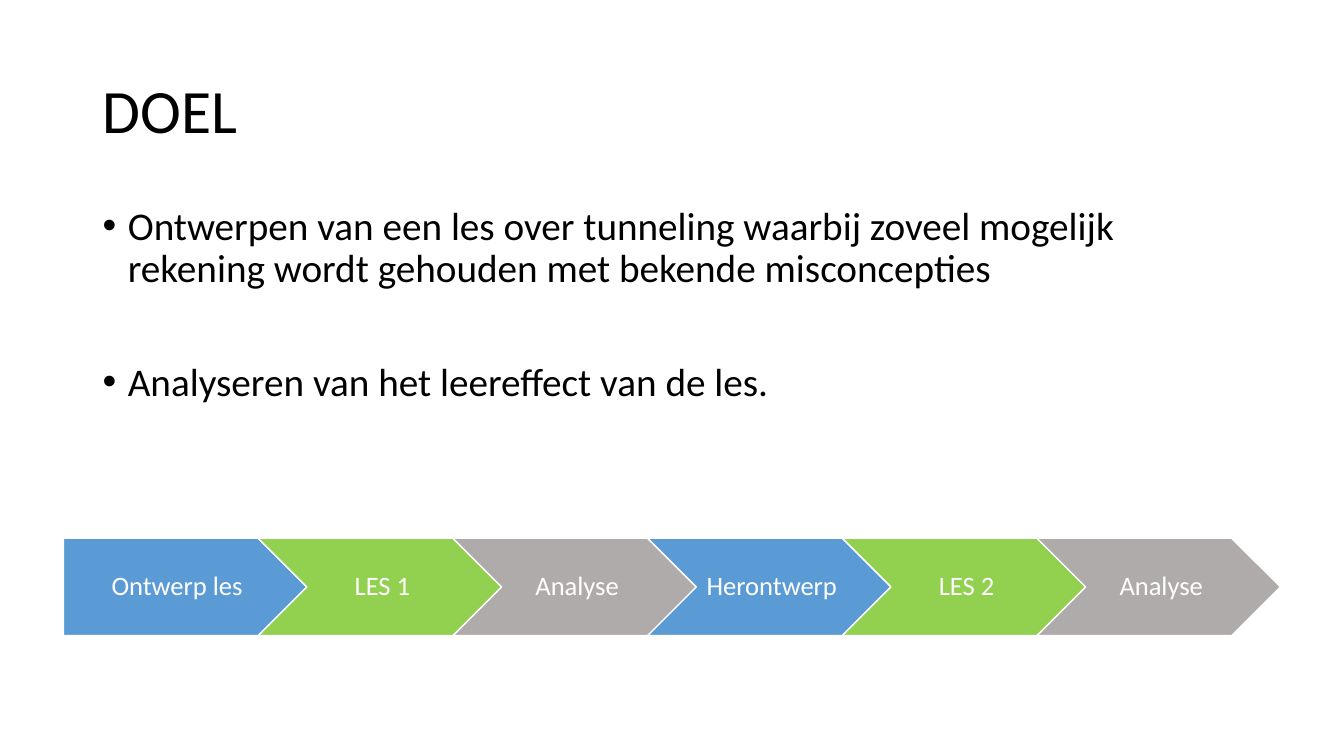
from lxml.etree import SubElement
from pptx import Presentation
from pptx.dml.color import RGBColor
from pptx.enum.shapes import MSO_SHAPE as Shape
from pptx.enum.text import MSO_ANCHOR as Anchor, PP_ALIGN as Align
from pptx.oxml.ns import qn
from pptx.util import Inches, Pt

TITLE = "DOEL"
GOALS = [  # text, space before in points
    ("Ontwerpen van een les over tunneling waarbij zoveel mogelijk "
     "rekening wordt gehouden met bekende misconcepties", 10),
    ("Analyseren van het leereffect van de les.", 51),
]
STEPS = ["Ontwerp les", "LES 1", "Analyse", "Herontwerp", "LES 2", "Analyse"]
STEP_COLORS = ["5B9BD5", "92D050", "AFABAB"]
BLACK, WHITE = "000000", "FFFFFF"
FONT = "Calibri"

SLIDE_WIDTH, SLIDE_HEIGHT = 13.33, 7.5
MARGIN, CONTENT_WIDTH = 0.92, 11.5
BAND_LEFT, BAND_TOP, BAND_WIDTH = 0.63, 5.34, 12.07
OVERLAP = 0.2  # share of a step covered by the next one
STEP_WIDTH = BAND_WIDTH / (len(STEPS) - (len(STEPS) - 1) * OVERLAP)
STEP_HEIGHT = STEP_WIDTH * 2 * OVERLAP
STEP_PITCH = STEP_WIDTH * (1 - OVERLAP)


def color(hex_value):
    return RGBColor.from_string(hex_value)


def format_paragraph(paragraph, size, font_color):
    paragraph.line_spacing = 0.9
    for run in paragraph.runs:
        run.font.name = FONT
        run.font.size = Pt(size)
        run.font.color.rgb = color(font_color)


def add_bullet(paragraph):
    properties = paragraph._p.get_or_add_pPr()
    properties.set("marL", str(Inches(0.25)))
    properties.set("indent", str(-Inches(0.25)))
    SubElement(properties, qn("a:buFont")).set("typeface", "Arial")
    SubElement(properties, qn("a:buChar")).set("char", "•")


def add_text_frame(slide, top, height):
    box = slide.shapes.add_textbox(Inches(MARGIN), Inches(top),
                                   Inches(CONTENT_WIDTH), Inches(height))
    box.text_frame.word_wrap = True
    return box.text_frame


def add_title(slide):
    frame = add_text_frame(slide, 0.4, 1.45)
    frame.vertical_anchor = Anchor.MIDDLE
    frame.text = TITLE
    format_paragraph(frame.paragraphs[0], 44, BLACK)


def add_goals(slide):
    frame = add_text_frame(slide, 2, 2.77)
    frame.text = "\n".join(text for text, _ in GOALS)
    for paragraph, (_, space_before) in zip(frame.paragraphs, GOALS):
        format_paragraph(paragraph, 28, BLACK)
        paragraph.space_before = Pt(space_before)
        add_bullet(paragraph)


def add_step(slide, index, label):
    first = index == 0
    step = slide.shapes.add_shape(
        Shape.PENTAGON if first else Shape.CHEVRON,
        Inches(BAND_LEFT + index * STEP_PITCH), Inches(BAND_TOP),
        Inches(STEP_WIDTH), Inches(STEP_HEIGHT))
    step.shadow.inherit = False
    step.fill.solid()
    step.fill.fore_color.rgb = color(STEP_COLORS[index % len(STEP_COLORS)])
    step.line.color.rgb = color(WHITE)
    step.line.width = Pt(1)

    frame = step.text_frame
    frame.word_wrap = True
    frame.vertical_anchor = Anchor.MIDDLE
    frame.margin_left = Inches(0.11 if first else 0.08)
    frame.margin_right = Inches(0.03)
    frame.margin_top = frame.margin_bottom = Inches(0.06)
    frame.text = label
    frame.paragraphs[0].alignment = Align.CENTER
    format_paragraph(frame.paragraphs[0], 19, WHITE)


def main():
    presentation = Presentation()
    presentation.slide_width = Inches(SLIDE_WIDTH)
    presentation.slide_height = Inches(SLIDE_HEIGHT)
    slide = presentation.slides.add_slide(presentation.slide_layouts[6])
    add_title(slide)
    add_goals(slide)
    for index, label in enumerate(STEPS):
        add_step(slide, index, label)
    presentation.save("out.pptx")


if __name__ == "__main__":
    main()
